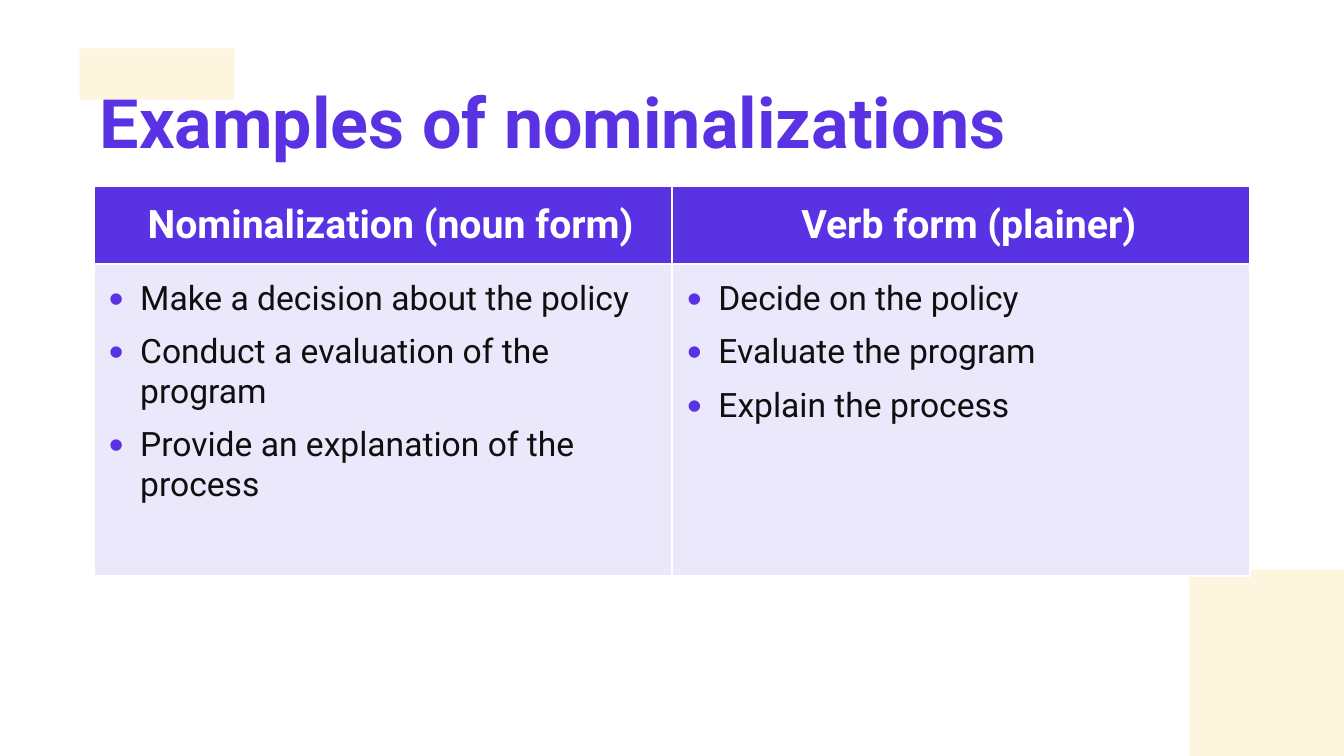
from dataclasses import dataclass

from lxml import etree
from pptx import Presentation
from pptx.dml.color import RGBColor
from pptx.enum.shapes import MSO_SHAPE
from pptx.enum.text import MSO_ANCHOR, PP_ALIGN
from pptx.oxml.ns import qn
from pptx.util import Inches, Pt

RECTANGLE = MSO_SHAPE.RECTANGLE
MIDDLE, TOP = MSO_ANCHOR.MIDDLE, MSO_ANCHOR.TOP
CENTER = PP_ALIGN.CENTER


@dataclass(frozen=True)
class Theme:
    font: str = "Roboto"
    violet: str = "5832E3"
    lavender: str = "EAE8FA"
    cream: str = "FEF5DF"
    white: str = "FFFFFF"
    ink: str = "0F0F0F"
    title_size: int = 50
    header_size: int = 28
    body_size: int = 24
    border: float = 1.5


theme = Theme()

presentation = Presentation()
presentation.slide_width = Inches(13.33)
presentation.slide_height = Inches(7.5)
slide = presentation.slides.add_slide(presentation.slide_layouts[6])


def place(left, top, width, height):
    """Turn percentages of the slide's size into lengths."""
    across = presentation.slide_width / 100
    down = presentation.slide_height / 100
    return int(left * across), int(top * down), int(width * across), int(height * down)


def add_run(paragraph, text, size, color, bold):
    run = paragraph.add_run()
    run.text = text
    run.font.name = theme.font
    run.font.size = Pt(size)
    run.font.bold = bold
    run.font.color.rgb = RGBColor.from_string(color)


# The corner block lies behind the table, the tab in front of the title
corner_block = slide.shapes.add_shape(RECTANGLE, *place(88.5, 75.33, 11.5, 24.67))

title = slide.shapes.add_textbox(*place(6.68, 8.67, 86.35, 13.47))
title.text_frame.word_wrap = True
title.text_frame.vertical_anchor = MIDDLE
title_paragraph = title.text_frame.paragraphs[0]
title_paragraph.line_spacing = 1.1
add_run(title_paragraph, "Examples of nominalizations", theme.title_size, theme.violet, True)

columns = {
    "Nominalization (noun form)": [
        "Make a decision about the policy",
        "Conduct a evaluation of the program",
        "Provide an explanation of the process",
    ],
    "Verb form (plainer)": [
        "Decide on the policy",
        "Evaluate the program",
        "Explain the process",
    ],
}
table_area = place(6.98, 24.67, 86.05, 51.33)
table = slide.shapes.add_table(2, len(columns), *table_area).table
table.rows[0].height = Inches(0.75)
table.rows[1].height = table_area[3] - table.rows[0].height

for column, (heading, examples) in enumerate(columns.items()):
    header, body = table.cell(0, column), table.cell(1, column)
    for cell, fill, anchor, left_margin in (
        (header, theme.violet, MIDDLE, 0.3),
        (body, theme.lavender, TOP, 0.15),
    ):
        cell.margin_left = Inches(left_margin)
        cell.margin_right = cell.margin_top = cell.margin_bottom = Inches(0.15)
        cell.vertical_anchor = anchor
        properties = cell._tc.get_or_add_tcPr()
        for side in ("a:lnL", "a:lnR", "a:lnT", "a:lnB"):
            line = etree.SubElement(properties, qn(side), w=str(Pt(theme.border)))
            line_fill = etree.SubElement(line, qn("a:solidFill"))
            etree.SubElement(line_fill, qn("a:srgbClr"), val=theme.white)
        cell.fill.solid()
        cell.fill.fore_color.rgb = RGBColor.from_string(fill)

    heading_paragraph = header.text_frame.paragraphs[0]
    heading_paragraph.alignment = CENTER
    add_run(heading_paragraph, heading, theme.header_size, theme.white, True)

    for index, example in enumerate(examples):
        frame = body.text_frame
        paragraph = frame.add_paragraph() if index else frame.paragraphs[0]
        paragraph.space_after = Pt(10)
        bullet = paragraph._p.get_or_add_pPr()
        bullet.set("marL", str(Inches(0.31)))
        bullet.set("indent", str(-Inches(0.31)))
        bullet_color = etree.SubElement(bullet, qn("a:buClr"))
        etree.SubElement(bullet_color, qn("a:srgbClr"), val=theme.violet)
        etree.SubElement(bullet, qn("a:buSzPct"), val="125000")
        etree.SubElement(bullet, qn("a:buFont"), typeface="Arial")
        etree.SubElement(bullet, qn("a:buChar"), char="•")
        add_run(paragraph, example, theme.body_size, theme.ink, False)

title_tab = slide.shapes.add_shape(RECTANGLE, *place(5.93, 6.4, 11.5, 6.8))

for block in (corner_block, title_tab):
    block.shadow.inherit = False
    block.fill.solid()
    block.fill.fore_color.rgb = RGBColor.from_string(theme.cream)
    block.line.fill.background()

presentation.save("out.pptx")
